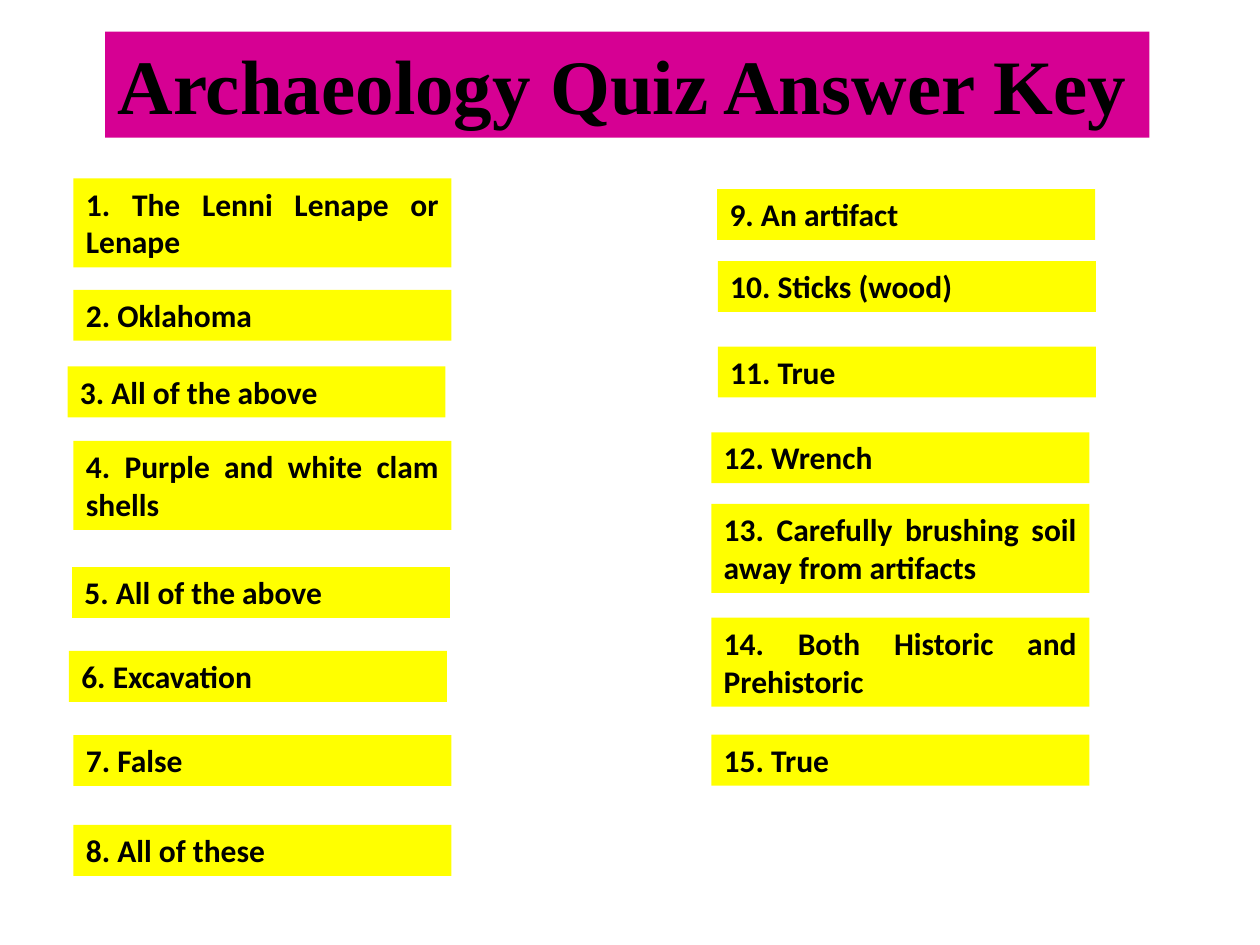
from pptx import Presentation
from pptx import util as u
from pptx.dml import color
from pptx.enum import text

Pt = u.Pt
COLORS = {"title": "D60093", "answer": "FFFF00", "ink": "000000"}
ANSWER_WIDTH = 216
ONE_LINE, TWO_LINES = 29.1, 50.9

ANSWERS = [
    (42, 102, TWO_LINES, "The Lenni Lenape or Lenape"),
    (42, 165.6, ONE_LINE, "Oklahoma"),
    (38.6, 209.4, ONE_LINE, "All of the above"),
    (42, 252, TWO_LINES, "Purple and white clam shells"),
    (41.2, 324, ONE_LINE, "All of the above"),
    (39.4, 372, ONE_LINE, "Excavation"),
    (42, 420, ONE_LINE, "False"),
    (42, 471.4, ONE_LINE, "All of these"),
    (409.8, 108, ONE_LINE, "An artifact"),
    (410.2, 149.2, ONE_LINE, "Sticks (wood)"),
    (410.2, 198, ONE_LINE, "True"),
    (406.5, 247, ONE_LINE, "Wrench"),
    (406.5, 288, TWO_LINES, "Carefully brushing soil away from artifacts"),
    (406.5, 353, TWO_LINES, "Both Historic and Prehistoric"),
    (406.5, 419.8, ONE_LINE, "True"),
]


def rgb(name):
    return color.RGBColor.from_string(COLORS[name])


def format_box(sp, fill, wrap):
    sp.fill.solid()
    sp.fill.fore_color.rgb = rgb(fill)
    tf = sp.text_frame
    tf.word_wrap = wrap
    tf.auto_size = text.MSO_AUTO_SIZE.SHAPE_TO_FIT_TEXT
    tf.vertical_anchor = text.MSO_ANCHOR.TOP


def add_run(p, words, font, size, align):
    p.alignment = align
    r = p.add_run()
    r.text = words
    r.font.name = font
    r.font.size = Pt(size)
    r.font.bold = True
    r.font.color.rgb = rgb("ink")


def set_title(s, words):
    sp = s.shapes.title
    sp.left, sp.top, sp.width, sp.height = Pt(60), Pt(18), Pt(596.8), Pt(60.6)
    format_box(sp, "title", False)
    add_run(sp.text_frame.paragraphs[0], words, "Times New Roman", 44,
            text.PP_ALIGN.LEFT)


def add_answer(s, number, left, top, height, words):
    sp = s.shapes.add_textbox(Pt(left), Pt(top), Pt(ANSWER_WIDTH), Pt(height))
    format_box(sp, "answer", True)
    add_run(sp.text_frame.paragraphs[0], f"{number}. {words}", "Calibri", 18,
            text.PP_ALIGN.JUSTIFY)


def main():
    prs = Presentation()
    prs.slide_width, prs.slide_height = Pt(720), Pt(540)
    s = prs.slides.add_slide(prs.slide_layouts[5])
    set_title(s, "Archaeology Quiz Answer Key")
    for number, answer in enumerate(ANSWERS, 1):
        add_answer(s, number, *answer)
    prs.save("out.pptx")


if __name__ == "__main__":
    main()
